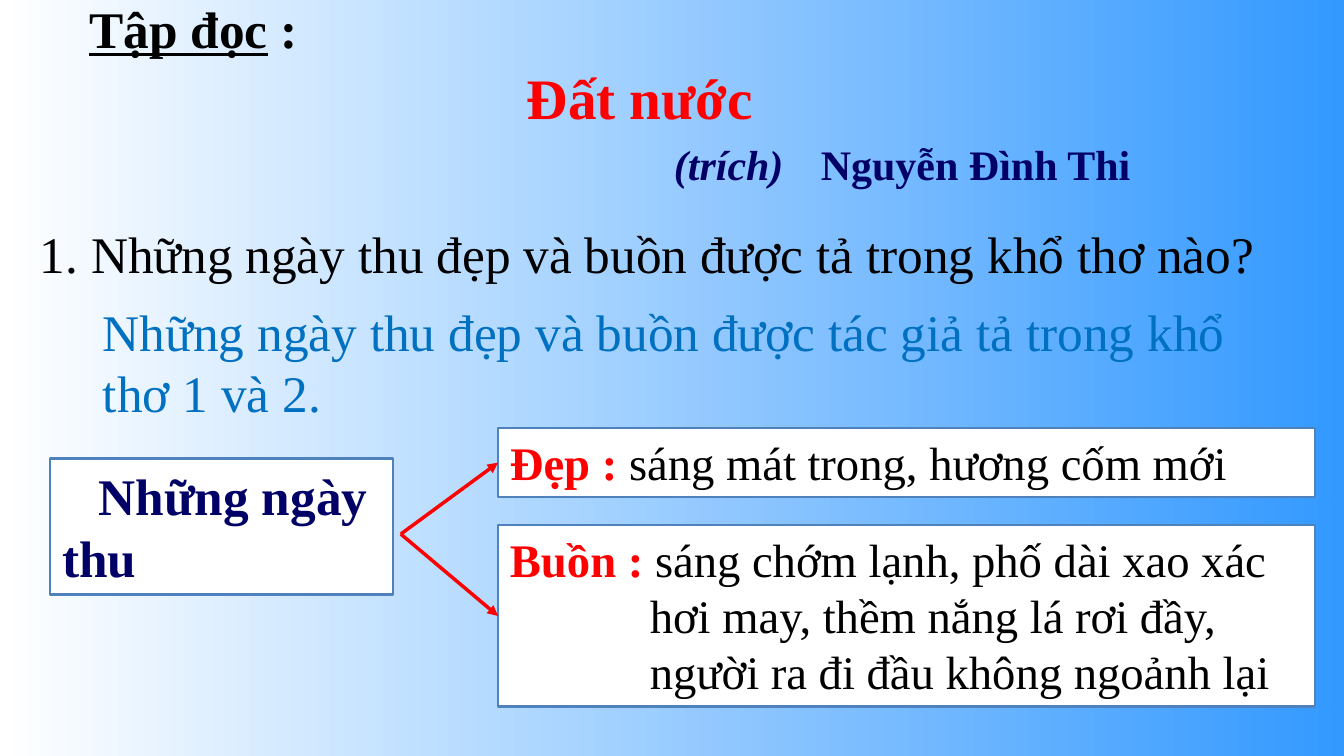
from lxml.etree import SubElement
from pptx import Presentation
from pptx.dml.color import RGBColor
from pptx.enum.shapes import MSO_CONNECTOR, MSO_SHAPE
from pptx.enum.text import MSO_ANCHOR, MSO_AUTO_SIZE, PP_ALIGN
from pptx.oxml.ns import qn
from pptx.util import Cm, Pt

BLACK, RED, NAVY = "000000", "FF0000", "000066"


def paint(target, color):
    """Give a font or fill a plain colour."""
    if hasattr(target, "solid"):
        target.solid()
        target.fore_color.rgb = RGBColor.from_string(color)
    else:
        target.color.rgb = RGBColor.from_string(color)


def place(shape, box):
    """Move a shape to its box and set its text frame."""
    shape.left, shape.top, shape.width, shape.height = map(Cm, box)
    frame = shape.text_frame
    frame.word_wrap = True
    frame.auto_size = MSO_AUTO_SIZE.NONE
    frame.vertical_anchor = MSO_ANCHOR.TOP
    frame.margin_left = frame.margin_right = Cm(0.36)
    frame.margin_top = frame.margin_bottom = Cm(0.18)
    return frame


def write(para, size, color, *texts, bold=False, left=0, first=0, tab=None):
    """Fill a paragraph with runs that share a style and return the runs."""
    para.alignment = PP_ALIGN.LEFT
    para.space_before = Pt(0)
    props = para._p.get_or_add_pPr()
    props.set("marL", str(Cm(left)))
    props.set("indent", str(Cm(first)))
    SubElement(props, qn("a:buNone"))
    if tab:
        stops = SubElement(props, qn("a:tabLst"))
        SubElement(stops, qn("a:tab"), pos=str(Cm(tab)), algn="l")
    font = para.font
    font.name, font.size, font.bold = "Times New Roman", Pt(size), bold
    paint(font, color)
    runs = []
    for text in texts:
        run = para.add_run()
        run.text = text
        runs.append(run)
    return runs


def add_text(slide, box):
    """Add a text box and return its frame."""
    return place(slide.shapes.add_textbox(0, 0, 0, 0), box)


def add_card(slide, box):
    """Add a white card with a blue edge."""
    card = slide.shapes.add_shape(MSO_SHAPE.RECTANGLE, 0, 0, 0, 0)
    card.shadow.inherit = False
    paint(card.fill, "FFFFFF")
    paint(card.line.fill, "4F81BD")
    card.line.width = Pt(2)
    place(card, box)
    return card


def add_arrow(slide, start, card):
    """Draw a red arrow from a point to the left side of a card."""
    x, y = map(Cm, start)
    arrow = slide.shapes.add_connector(MSO_CONNECTOR.STRAIGHT, x, y, x, y)
    arrow.end_connect(card, 1)
    paint(arrow.line.fill, RED)
    arrow.line.width = Pt(3)
    SubElement(arrow.line._get_or_add_ln(), qn("a:tailEnd"), type="triangle")
    SubElement(arrow._element.spPr, qn("a:effectLst"))


def add_mood(slide, box, label, lines):
    """Add a card with a red label and its lines of verse."""
    card = add_card(slide, box)
    frame = card.text_frame
    name, verse = write(frame.paragraphs[0], 40, BLACK, label, lines[0])
    name.font.bold = True
    paint(name.font, RED)
    for line in lines[1:]:
        write(frame.add_paragraph(), 40, BLACK, line, left=4.23)
    return card


def add_head(slide, box):
    """Write the lesson type, the poem's title and its author."""
    left, top, width, height = box
    frame = add_text(slide, (left, top, width - 6.78, 2.24))
    topic, colon = write(frame.paragraphs[0], 44, BLACK, "Tập đọc", " :", bold=True)
    topic.font.underline = True
    frame = place(slide.shapes.title, (left + 13.23, top + 1.95, width - 15.57, height - 1.95))
    write(frame.paragraphs[0], 49, RED, "Đất nước", bold=True)
    para = frame.add_paragraph()
    part, name = write(para, 36, NAVY, "(trích)", "\tNguyễn Đình Thi",
                       bold=True, first=4.45, tab=10.62)
    para.space_before = Pt(7)
    part.font.italic = True


def add_quiz(slide, box):
    """Write the question and its answer."""
    left, top, width, height = box
    frame = place(slide.placeholders[1], (left, top, width, 2.54))
    write(frame.paragraphs[0], 44, BLACK,
          "1. Những ngày thu đẹp và buồn được tả trong khổ thơ nào?",
          left=1.35, first=-1.35)
    frame = add_text(slide, (left + 0.56, top + 2.34, width, height - 2.34))
    write(frame.paragraphs[0], 44, "0070C0",
          "Những ngày thu đẹp và buồn được tác giả tả trong khổ thơ 1 và 2.",
          left=1.35)


def add_chart(slide, box):
    """Split the autumn days into the lovely and the sad."""
    left, top, width, height = box
    days = add_card(slide, (left, top + 0.92, 10.36, 4.11))
    write(days.text_frame.paragraphs[0], 44, NAVY, "Những ngày thu",
          bold=True, first=1.1)
    side, wide = left + 13.54, width - 13.54
    moods = [
        (0, 2.08, "Đẹp : ", ["sáng mát trong, hương cốm mới"]),
        (2.93, height - 2.93, "Buồn : ", ["sáng chớm lạnh, phố dài xao xác",
                                         "hơi may, thềm nắng lá rơi đầy,",
                                         "người ra đi đầu không ngoảnh lại"]),
    ]
    for down, tall, label, lines in moods:
        card = add_mood(slide, (side, top + down, wide, tall), label, lines)
        add_arrow(slide, (left + 10.6, top + 3.2), card)


def main():
    """Build and save the slide."""
    deck = Presentation()
    deck.slide_width, deck.slide_height = Cm(40.64), Cm(22.86)
    slide = deck.slides.add_slide(deck.slide_layouts[1])
    fill = slide.background.fill
    fill.gradient()
    fill.gradient_angle = 0
    for stop, color in zip(fill.gradient_stops, ("FFFFFF", "3399FF")):
        paint(stop, color)
    add_head(slide, (2.34, -0.25, 40.64, 7.11))
    add_quiz(slide, (0.84, 6.55, 37.97, 6.79))
    add_chart(slide, (1.52, 12.95, 38.25, 8.42))
    deck.save("out.pptx")


if __name__ == "__main__":
    main()
